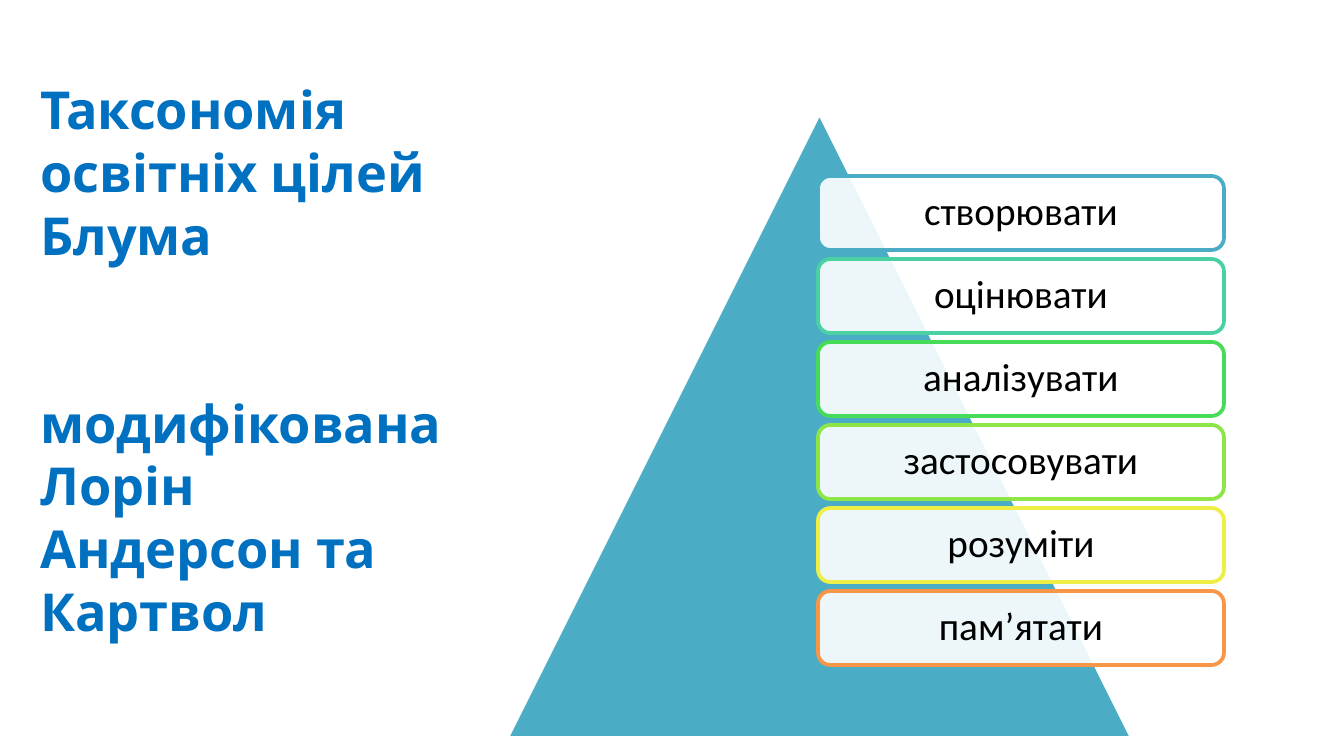
import pptx
import pptx.util
import pptx.dml.color
import pptx.enum.shapes
import pptx.enum.text
import pptx.oxml.ns
import lxml.etree

PX = 914400 / 134.4
THEME = {
    "head": "0070C0", "peak": "4BACC6", "paper": "FFFFFF", "ink": "000000",
    "head font": "Karla", "step font": "Calibri",
    "head size": 28, "step size": 21, "line": 2, "gap": 67,
}
STEPS = [
    ("створювати", "4BACC6"),
    ("оцінювати", "49D1A3"),
    ("аналізувати", "47DC57"),
    ("застосовувати", "8DE646"),
    ("розуміти", "EEEF46"),
    ("пам’ятати", "F79646"),
]
KIND = pptx.enum.shapes.MSO_SHAPE
Pt = pptx.util.Pt
RGB = pptx.dml.color.RGBColor.from_string


def px(*nums):
    """Turn px lengths into EMU."""
    return [round(num * PX) for num in nums]


def draw(kind, box, fill, line):
    shape = slide.shapes.add_shape(kind, *px(*box))
    shape.shadow.inherit = False
    shape.fill.solid()
    shape.fill.fore_color.rgb = RGB(fill)
    shape.line.color.rgb = RGB(line)
    shape.line.width = Pt(THEME["line"])
    return shape


deck = pptx.Presentation()
deck.slide_width, deck.slide_height = px(1344, 756)
slide = deck.slides.add_slide(deck.slide_layouts[6])

# Heading
head = slide.shapes.add_textbox(*px(27, 71, 434, 583)).text_frame
head.word_wrap = True
head.text = "Таксономія освітніх цілей Блума\nмодифікована Лорін Андерсон та Картвол"
head.paragraphs[1].space_before = Pt(THEME["gap"])
for para in head.paragraphs:
    font = para.runs[0].font
    font.name = THEME["head font"]
    font.size = Pt(THEME["head size"])
    font.bold = True
    font.color.rgb = RGB(THEME["head"])

# Pyramid
draw(KIND.ISOSCELES_TRIANGLE, (507, 113, 625, 625), THEME["peak"], THEME["paper"])

# Steps, from the top of the pyramid down
for row, (word, tint) in enumerate(STEPS):
    step = draw(KIND.ROUNDED_RECTANGLE, (818, 176 + 83 * row, 406, 74), THEME["paper"], tint)
    color = step.fill._xPr.find(".//" + pptx.oxml.ns.qn("a:srgbClr"))
    lxml.etree.SubElement(color, pptx.oxml.ns.qn("a:alpha"), val="90000")

    frame = step.text_frame
    frame.text = word
    frame.word_wrap = True
    frame.vertical_anchor = pptx.enum.text.MSO_ANCHOR.MIDDLE
    para = frame.paragraphs[0]
    para.alignment = pptx.enum.text.PP_ALIGN.CENTER
    para.line_spacing = 0.9
    font = para.runs[0].font
    font.name = THEME["step font"]
    font.size = Pt(THEME["step size"])
    font.color.rgb = RGB(THEME["ink"])

deck.save("out.pptx")
